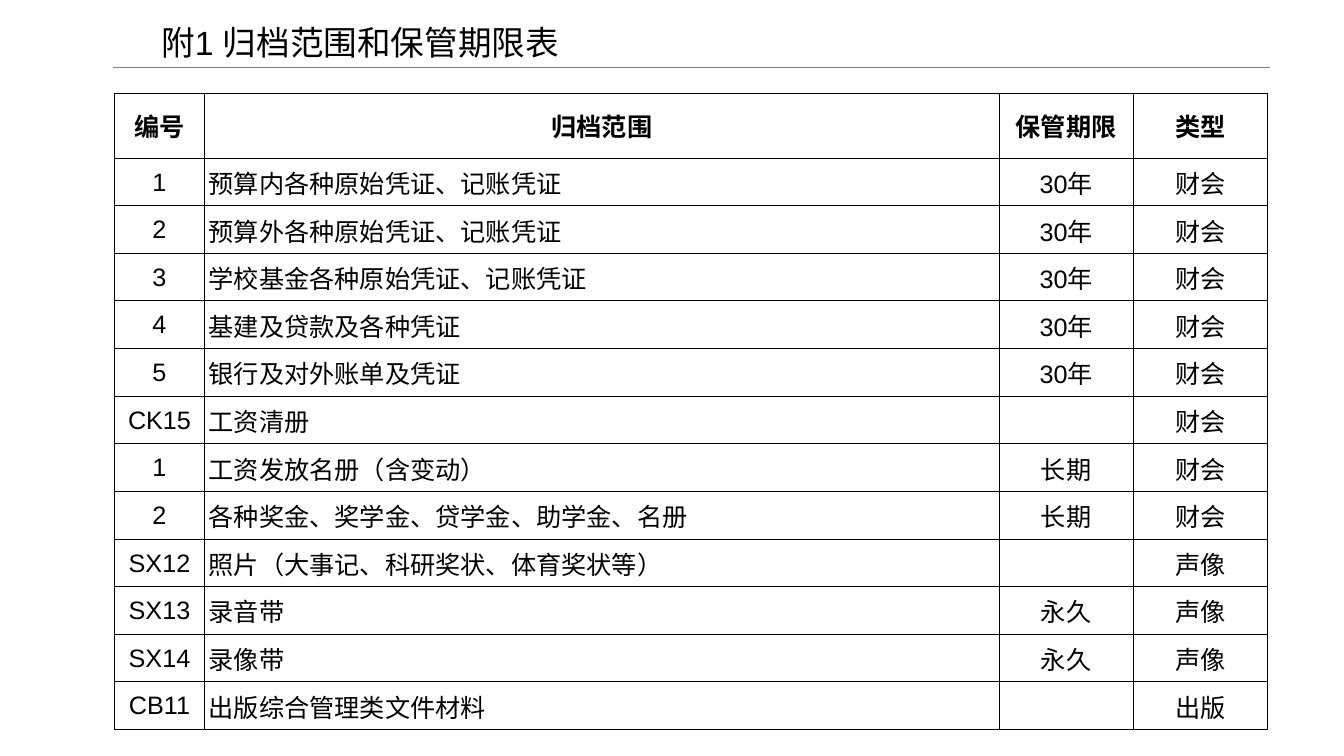
from dataclasses import dataclass

from lxml import etree
from pptx import Presentation
from pptx import util as u
from pptx.dml.color import RGBColor
from pptx.enum import shapes, text
from pptx.oxml.ns import qn

COLORS = {"text": "000000", "rule": "808080", "border": "000000", "paper": "FFFFFF"}
FONT = "Arial"
HEADER_HEIGHT, ROW_HEIGHT = u.Cm(1.64), u.Cm(1.2)


@dataclass(frozen=True)
class Column:
    heading: str
    width: float
    align: text.PP_ALIGN = text.PP_ALIGN.CENTER
    margin: float = 0.03


@dataclass(frozen=True)
class Record:
    number: str
    scope: str
    period: str
    category: str

    def values(self) -> list[str]:
        return [self.number, self.scope, self.period, self.category]


COLUMNS = [
    Column("编号", 2.28),
    Column("归档范围", 20.02, text.PP_ALIGN.LEFT, 0.1),
    Column("保管期限", 3.38),
    Column("类型", 3.38),
]

RECORDS = [
    Record("1", "预算内各种原始凭证、记账凭证", "30年", "财会"),
    Record("2", "预算外各种原始凭证、记账凭证", "30年", "财会"),
    Record("3", "学校基金各种原始凭证、记账凭证", "30年", "财会"),
    Record("4", "基建及贷款及各种凭证", "30年", "财会"),
    Record("5", "银行及对外账单及凭证", "30年", "财会"),
    Record("CK15", "工资清册", "", "财会"),
    Record("1", "工资发放名册（含变动）", "长期", "财会"),
    Record("2", "各种奖金、奖学金、贷学金、助学金、名册", "长期", "财会"),
    Record("SX12", "照片（大事记、科研奖状、体育奖状等）", "", "声像"),
    Record("SX13", "录音带", "永久", "声像"),
    Record("SX14", "录像带", "永久", "声像"),
    Record("CB11", "出版综合管理类文件材料", "", "出版"),
]


def write(frame, content: str, *, size: float = 18, bold: bool = False,
          align: text.PP_ALIGN = text.PP_ALIGN.LEFT, spacing: float = 1.0) -> None:
    paragraph = frame.paragraphs[0]
    paragraph.alignment = align
    paragraph.line_spacing = spacing
    if not content:
        return
    run = paragraph.add_run()
    run.text = content
    run.font.name = FONT
    run.font.size = u.Pt(size)
    run.font.bold = bold
    run.font.color.rgb = RGBColor.from_string(COLORS["text"])


def add_borders(cell, width: float = 0.5) -> None:
    properties = cell._tc.get_or_add_tcPr()
    for side in ("a:lnL", "a:lnR", "a:lnT", "a:lnB"):
        line = etree.SubElement(properties, qn(side), w=str(u.Pt(width)))
        fill = etree.SubElement(line, qn("a:solidFill"))
        etree.SubElement(fill, qn("a:srgbClr"), val=COLORS["border"])


def fill_cell(cell, content: str, *, bold: bool, align: text.PP_ALIGN,
              margin: float, top: float) -> None:
    add_borders(cell)
    cell.fill.solid()
    cell.fill.fore_color.rgb = RGBColor.from_string(COLORS["paper"])
    cell.vertical_anchor = text.MSO_ANCHOR.MIDDLE
    cell.margin_left = cell.margin_right = u.Cm(margin)
    cell.margin_top, cell.margin_bottom = u.Cm(top), 0
    write(cell.text_frame, content, bold=bold, align=align)


def add_title(slide) -> None:
    title = slide.shapes.title
    title.left, title.top = u.Cm(3.81), u.Cm(0.36)
    title.width, title.height = u.Cm(28.09), u.Cm(1.52)
    title.text_frame.vertical_anchor = text.MSO_ANCHOR.MIDDLE
    write(title.text_frame, "附1 归档范围和保管期限表", size=24, spacing=0.9)


def add_rule(slide) -> None:
    rule = slide.shapes.add_connector(
        shapes.MSO_CONNECTOR.STRAIGHT, u.Cm(2.85), u.Cm(1.71), u.Cm(32), u.Cm(1.71))
    rule.line.color.rgb = RGBColor.from_string(COLORS["rule"])
    rule.line.width = u.Pt(0.75)
    etree.SubElement(rule._element.spPr, qn("a:effectLst"))


def add_archive_table(slide) -> None:
    width = u.Cm(sum(column.width for column in COLUMNS))
    height = HEADER_HEIGHT + ROW_HEIGHT * len(RECORDS)
    table = slide.shapes.add_table(
        len(RECORDS) + 1, len(COLUMNS), u.Cm(2.88), u.Cm(2.34), width, height).table
    table.first_row = table.horz_banding = False

    # Grid
    for index, column in enumerate(COLUMNS):
        table.columns[index].width = u.Cm(column.width)
    for index, row in enumerate(table.rows):
        row.height = ROW_HEIGHT if index else HEADER_HEIGHT

    # Header and records
    for index, column in enumerate(COLUMNS):
        fill_cell(table.cell(0, index), column.heading, bold=True,
                  align=text.PP_ALIGN.CENTER, margin=0, top=0)
        for number, record in enumerate(RECORDS, start=1):
            fill_cell(table.cell(number, index), record.values()[index], bold=False,
                      align=column.align, margin=column.margin, top=0.03)


def main() -> None:
    presentation = Presentation()
    presentation.slide_width, presentation.slide_height = u.Cm(33.87), u.Cm(19.05)
    slide = presentation.slides.add_slide(presentation.slide_layouts.get_by_name("Title Only"))
    add_rule(slide)
    add_title(slide)
    add_archive_table(slide)
    presentation.save("out.pptx")


if __name__ == "__main__":
    main()
